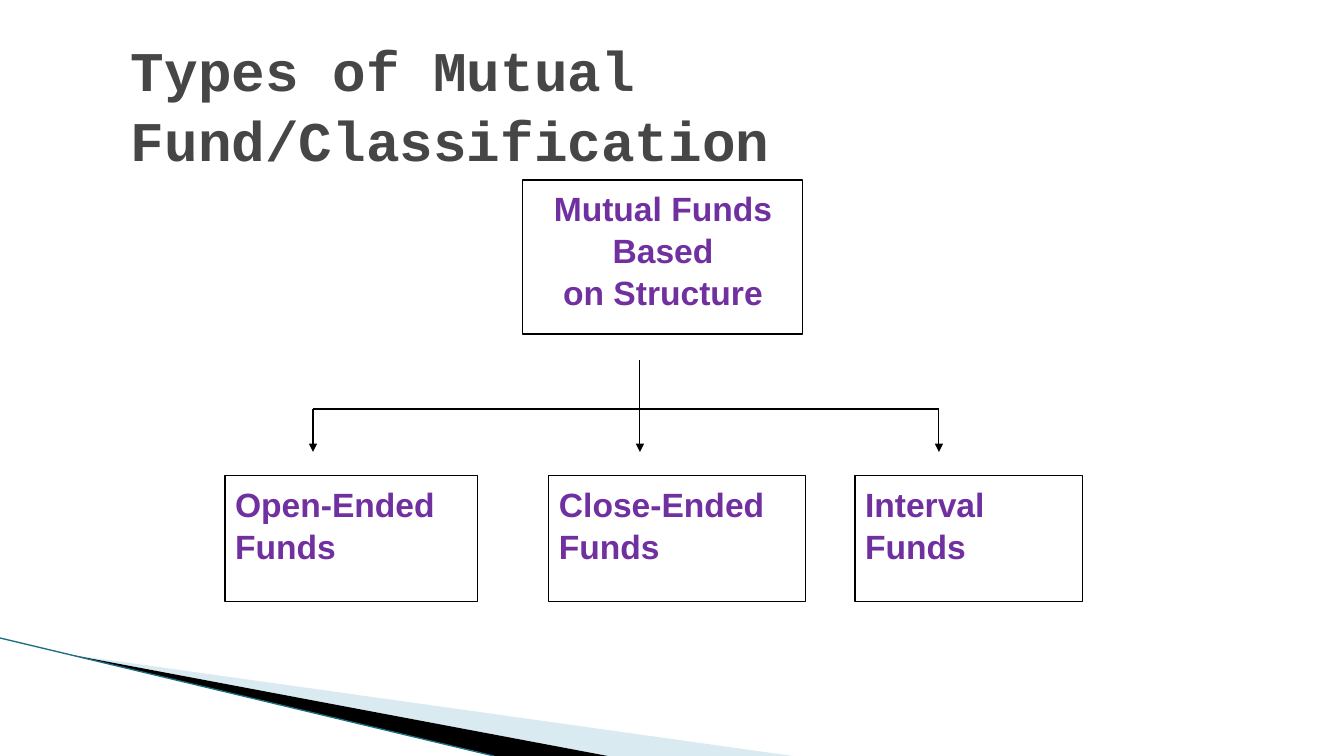
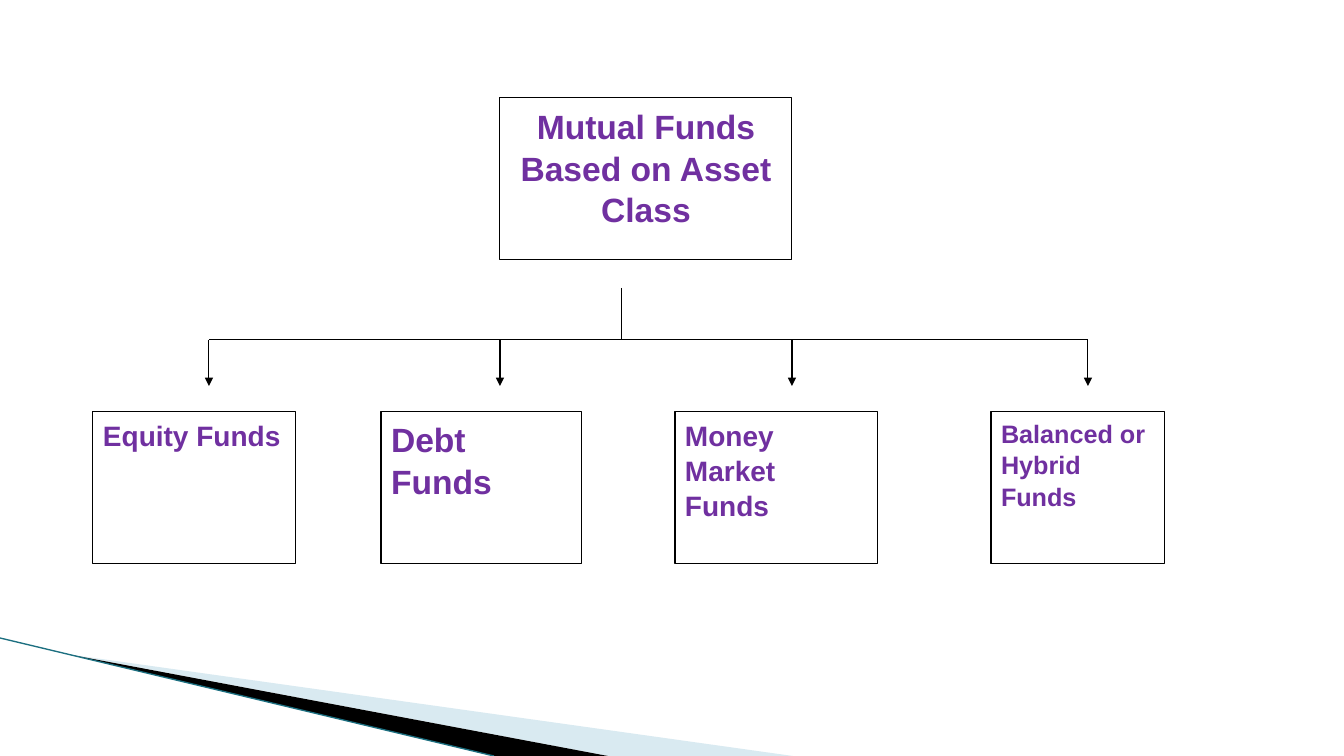
from dataclasses import dataclass

from lxml import etree
from pptx import Presentation
from pptx import util as u
from pptx.dml.color import RGBColor
from pptx.enum import shapes, text
from pptx.oxml.ns import qn

EMU_PER_PX = 914400 / 100.8
BLACK, WHITE, PURPLE, GREY = "000000", "FFFFFF", "7030A0", "464646"
PALE_BLUE, TEAL = "D9EAF1", "1C6F80"
LEFT, CENTER = text.PP_ALIGN.LEFT, text.PP_ALIGN.CENTER


@dataclass(frozen=True)
class Box:
    label: str
    x: int
    y: int
    w: int
    h: int
    size: int = 24
    align: text.PP_ALIGN = LEFT


@dataclass(frozen=True)
class Tree:
    root: Box
    children: list[Box]
    stem_x: int
    stem_top: int
    bus_y: int
    arrow_y: int
    arrow_xs: list[int]


def px(n: int) -> u.Emu:
    return u.Emu(round(n * EMU_PER_PX))


def rgb(value: str) -> RGBColor:
    return RGBColor.from_string(value)


def write(tf, content: str, *, size: int, color: str, font: str = "Arial",
          align=LEFT, anchor=text.MSO_ANCHOR.TOP, margins=(10, 6, 10, 5)) -> None:
    tf.word_wrap = True
    tf.auto_size = text.MSO_AUTO_SIZE.NONE
    tf.vertical_anchor = anchor
    tf.margin_left, tf.margin_top, tf.margin_right, tf.margin_bottom = map(px, margins)
    for i, line in enumerate(content.split("\n")):
        p = tf.add_paragraph() if i else tf.paragraphs[0]
        p.alignment = align
        p.line_spacing = 1.04
        p.space_before = u.Pt(0)
        r = p.add_run()
        r.text = line
        r.font.name, r.font.size, r.font.bold = font, u.Pt(size), True
        r.font.color.rgb = rgb(color)


def add_line(s, x1: int, y1: int, x2: int, y2: int, *, color: str = BLACK,
             width: float = 0.75, arrow: bool = False):
    c = s.shapes.add_connector(shapes.MSO_CONNECTOR.STRAIGHT, px(x1), px(y1), px(x2), px(y2))
    c.line.color.rgb = rgb(color)
    c.line.width = u.Pt(width)
    sp_pr = c.element.spPr
    if arrow:
        etree.SubElement(sp_pr.find(qn("a:ln")), qn("a:tailEnd"), type="triangle")
    etree.SubElement(sp_pr, qn("a:effectLst"))
    return c


def add_wedge(s, points: list[tuple[int, int]], color: str):
    fb = s.shapes.build_freeform(*points[0], scale=EMU_PER_PX)
    fb.add_line_segments(points[1:], close=True)
    sp = fb.convert_to_shape()
    sp.shadow.inherit = False
    sp.fill.solid()
    sp.fill.fore_color.rgb = rgb(color)
    sp.line.fill.background()
    return sp


def decorate_master(prs, s) -> None:
    swoosh = [
        add_wedge(s, [(73, 655), (793, 756), (608, 756)], PALE_BLUE),
        add_wedge(s, [(72, 655), (608, 756), (494, 756)], BLACK),
        add_line(s, 0, 638, 494, 756, color=TEAL, width=0.95),
    ]
    for i, sp in enumerate(swoosh):
        prs.slide_master.shapes.element.insert(2 + i, sp.element)


def add_box(s, box: Box) -> None:
    sp = s.shapes.add_shape(shapes.MSO_SHAPE.RECTANGLE, *map(px, (box.x, box.y, box.w, box.h)))
    sp.shadow.inherit = False
    sp.fill.solid()
    sp.fill.fore_color.rgb = rgb(WHITE)
    sp.line.color.rgb = rgb(BLACK)
    sp.line.width = u.Pt(0.75)
    write(sp.text_frame, box.label, size=box.size, color=PURPLE, align=box.align)


def add_tree(s, tree: Tree) -> None:
    for box in [tree.root, *tree.children]:
        add_box(s, box)
    add_line(s, tree.stem_x, tree.stem_top, tree.stem_x, tree.bus_y)
    add_line(s, tree.arrow_xs[0], tree.bus_y, tree.arrow_xs[-1], tree.bus_y)
    for x in tree.arrow_xs:
        add_line(s, x, tree.bus_y, x, tree.arrow_y, arrow=True)


def add_title(s, content: str) -> None:
    title = s.shapes.title
    title.left, title.top, title.width, title.height = map(px, (130, 35, 1054, 134))
    write(title.text_frame, content, size=40, color=GREY, font="Courier New",
          anchor=text.MSO_ANCHOR.MIDDLE, margins=(1, 1, 0, 0))


STRUCTURE = Tree(
    root=Box("Mutual Funds\nBased\non Structure", 523, 180, 280, 154, align=CENTER),
    children=[
        Box("Open-Ended Funds", 225, 476, 253, 126),
        Box("Close-Ended Funds", 549, 476, 257, 126),
        Box("Interval Funds", 855, 476, 228, 126),
    ],
    stem_x=640, stem_top=360, bus_y=409, arrow_y=452, arrow_xs=[313, 640, 939],
)
ASSET_CLASS = Tree(
    root=Box("Mutual Funds Based on Asset Class", 500, 98, 292, 162, align=CENTER),
    children=[
        Box("Equity Funds", 93, 411, 203, 153, size=20),
        Box("Debt Funds", 381, 411, 201, 153),
        Box("Money Market\nFunds", 675, 411, 203, 153, size=20),
        Box("Balanced or Hybrid Funds", 991, 411, 174, 153, size=18),
    ],
    stem_x=622, stem_top=288, bus_y=340, arrow_y=386, arrow_xs=[209, 500, 792, 1088],
)


def main() -> None:
    prs = Presentation()
    prs.slide_width, prs.slide_height = px(1344), px(756)
    title_only, blank = prs.slide_layouts[5], prs.slide_layouts[6]

    s = prs.slides.add_slide(title_only)
    decorate_master(prs, s)
    add_title(s, "Types of Mutual Fund/Classification")
    add_tree(s, STRUCTURE)

    s = prs.slides.add_slide(blank)
    add_tree(s, ASSET_CLASS)

    prs.save("out.pptx")


if __name__ == "__main__":
    main()
